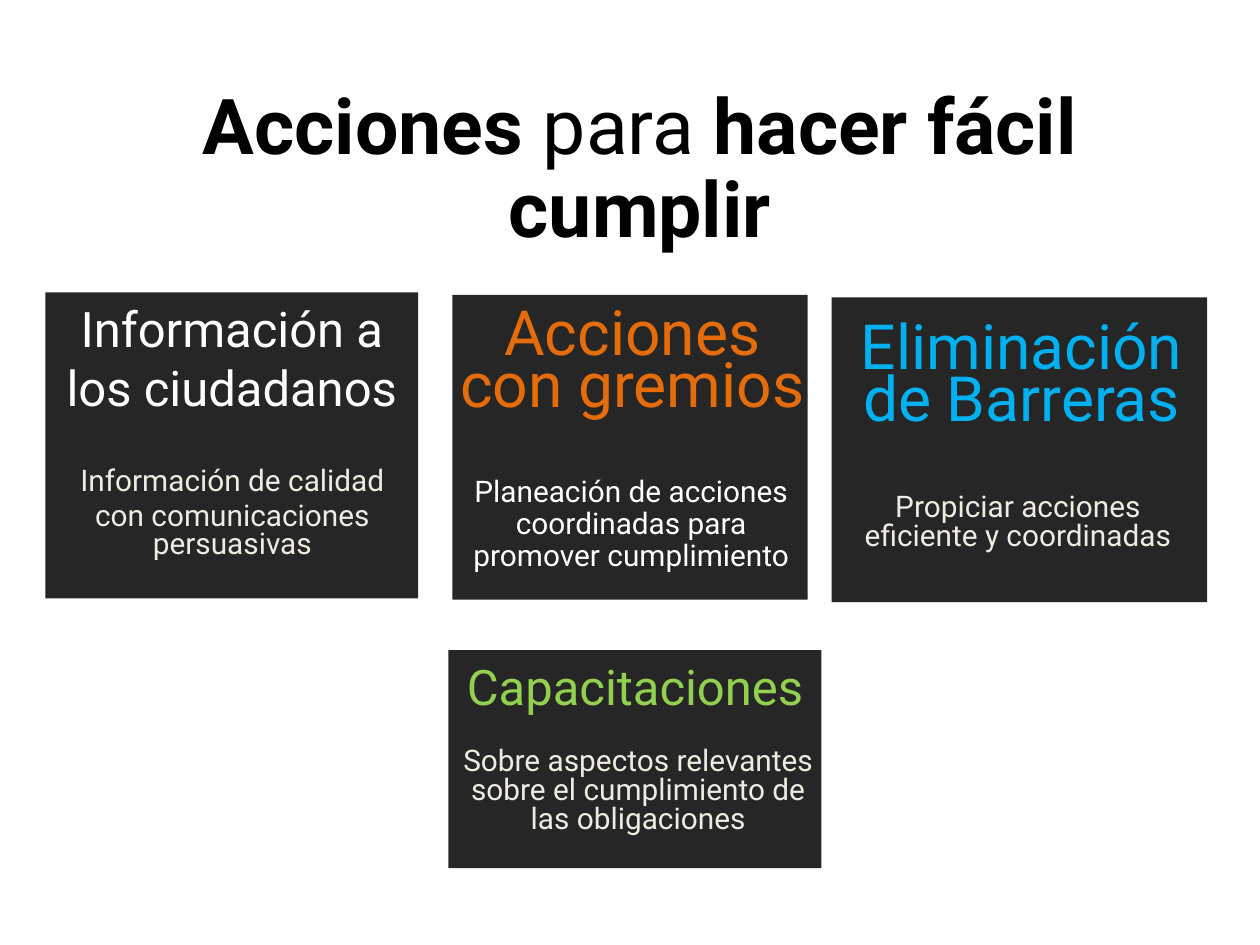
import pptx
import pptx.dml.color
import pptx.enum.shapes
import pptx.enum.text
import pptx.util

Inches = pptx.util.Inches
Pt = pptx.util.Pt
FONT = "Roboto"
BLACK, WHITE, CREAM, CARD = "000000", "FFFFFF", "EEECE1", "262626"
TOP = pptx.enum.text.MSO_ANCHOR.TOP
MIDDLE = pptx.enum.text.MSO_ANCHOR.MIDDLE

# box: left, top, width, height; heading and detail boxes are offsets from
# the card's corner, then a size. No heading box: the card holds the heading.
CARDS = [
    dict(box=(6.6, 2.36, 2.98, 2.42),
         heading="Eliminación de Barreras", heading_color="00B0F0",
         heading_box=(0.03, 0.19, 2.96, 1.22),
         details=["Propiciar acciones eficiente y coordinadas"],
         detail_box=(0.05, 1.19, 2.86, 1.21)),
    dict(box=(3.59, 2.34, 2.82, 2.42),
         heading="Acciones con gremios", heading_color="E46C0A",
         heading_box=(-0.05, 0.1, 2.96, 1.22),
         details=["Planeación de acciones coordinadas para promover cumplimiento"],
         detail_box=(0.01, 1.22, 2.82, 1.21),
         detail_color=WHITE, detail_spacing=0.9),
    dict(box=(0.36, 2.32, 2.96, 2.43),
         heading="Información a los ciudadanos", heading_color=WHITE,
         details=["Información de calidad", "con comunicaciones persuasivas"],
         detail_box=(-0.04, 1.16, 3.05, 1.21)),
    dict(box=(3.56, 5.16, 2.96, 1.73),
         heading="Capacitaciones", heading_color="92D050",
         details=["Sobre aspectos relevantes sobre el cumplimiento de las obligaciones"],
         detail_box=(-0.02, 0.52, 3.05, 1.21)),
]


def rgb(value):
    return pptx.dml.color.RGBColor.from_string(value)


def inches(box):
    return [Inches(value) for value in box]


def apply_format(target, values):
    for name, value in values.items():
        setattr(target, name, value)


def write(shape, paragraphs, size, color, spacing=1.0, anchor=TOP):
    """Fill a shape with centred paragraphs, each a list of (text, bold) runs."""
    frame = shape.text_frame
    apply_format(frame, dict(
        word_wrap=True, vertical_anchor=anchor,
        auto_size=pptx.enum.text.MSO_AUTO_SIZE.NONE))
    for index, runs in enumerate(paragraphs):
        paragraph = frame.add_paragraph() if index else frame.paragraphs[0]
        apply_format(paragraph, dict(
            alignment=pptx.enum.text.PP_ALIGN.CENTER, line_spacing=spacing,
            space_before=Pt(size * 0.2 if index else 0)))
        for text, bold in runs:
            run = paragraph.add_run()
            run.text = text
            apply_format(run.font, dict(name=FONT, size=Pt(size), bold=bold))
            run.font.color.rgb = rgb(color)


def add_title(slide, box):
    title = slide.shapes.title
    names = ("left", "top", "width", "height")
    apply_format(title, dict(zip(names, inches(box))))
    runs = [("Acciones ", True), ("para ", False), ("hacer fácil cumplir", True)]
    write(title, [runs], 44, BLACK, 0.9)


def add_card(slide, box, heading, heading_color, details, detail_box,
             heading_box=None, detail_color=CREAM, detail_spacing=0.8):
    shapes = slide.shapes.add_group_shape().shapes

    def add_text_box(offset_box):
        x, y, width, height = offset_box
        return shapes.add_textbox(*inches((box[0] + x, box[1] + y, width, height)))

    card = shapes.add_shape(pptx.enum.shapes.MSO_SHAPE.RECTANGLE, *inches(box))
    card.shadow.inherit = False
    card.fill.solid()
    card.fill.fore_color.rgb = rgb(CARD)
    card.line.fill.background()

    heading_runs = [[(heading, False)]]
    if heading_box:
        write(add_text_box(heading_box), heading_runs, 35.6, heading_color, 0.7)
    else:
        write(card, heading_runs, 28, heading_color)
    write(add_text_box(detail_box), [[(text, False)] for text in details],
          17, detail_color, detail_spacing, MIDDLE)


def main():
    presentation = pptx.Presentation()
    presentation.slide_width = Inches(10)
    presentation.slide_height = Inches(7.5)
    slide = presentation.slides.add_slide(presentation.slide_layouts[5])
    slide.background.fill.solid()
    slide.background.fill.fore_color.rgb = rgb(WHITE)
    add_title(slide, (1.17, 0.65, 7.82, 1.51))
    for card in CARDS:
        add_card(slide, **card)
    presentation.save("out.pptx")


if __name__ == "__main__":
    main()
